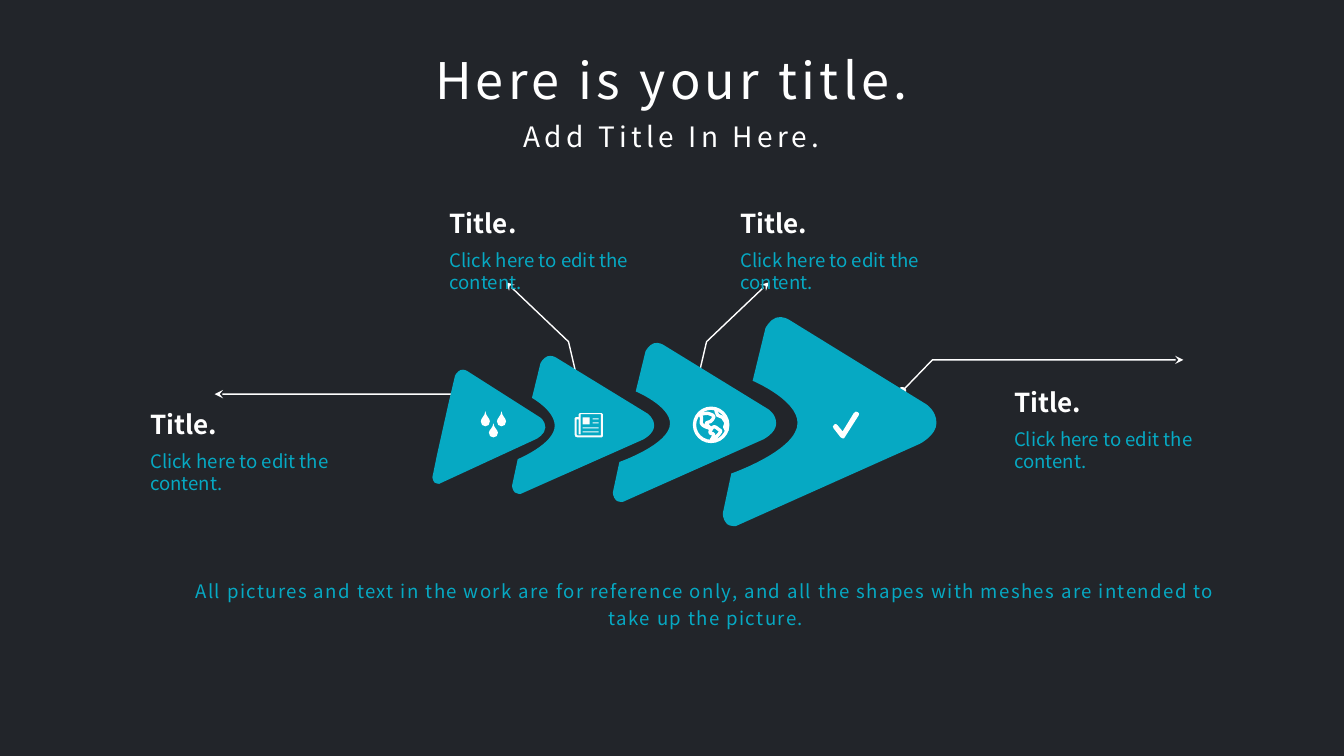
from lxml import etree
from pptx import Presentation
from pptx.dml.color import RGBColor
from pptx.enum.shapes import MSO_SHAPE
from pptx.enum.text import PP_ALIGN
from pptx.oxml.ns import qn
from pptx.util import Inches, Pt

CENTER, LEFT = PP_ALIGN.CENTER, PP_ALIGN.LEFT
RECT, OVAL = MSO_SHAPE.RECTANGLE, MSO_SHAPE.OVAL
DARK = RGBColor(0x22, 0x25, 0x2A)
TEAL = RGBColor(0x06, 0xA9, 0xC3)
WHITE = RGBColor(0xFF, 0xFF, 0xFF)
OFF_WHITE = RGBColor(0xFC, 0xFC, 0xFC)
FONT = "Noto Sans CJK SC"

# Grid of square cells: 133.33 columns by 75 rows
CELL = Inches(0.1)
COLS, ROWS = 133.33, 75

# Leader routes, as offsets from the start; x is mirrored for the left side
SIDE = [(0, 0), (3, -3.1), (27.9, -3.1)]
UPWARD = [(0, 0), (1.2, -5.1), (7.4, -11)]
# text left, text top, leader start, route, direction
CALLOUTS = [
    (44.6, 20.6, (57.6, 39), UPWARD, -1),
    (73.45, 20.6, (68.9, 39), UPWARD, 1),
    (100.6, 38.3, (89.5, 38.8), SIDE, 1),
    (14.9, 40.5, (49.2, 42.2), SIDE, -1),
]

# left, top, width, height, notch depth as a share of the width
ARROWS = [
    (42.9, 36.6, 11.2, 11.4, None),
    (50.8, 35.2, 14.1, 13.8, 0.3),
    (60.8, 33.9, 16.2, 15.9, 0.35),
    (71.7, 31.3, 21.2, 20.9, 0.35),
]

# Outlines: one point is a straight step, three points are a curve
ARROW_BODY = [
    [(.14, .31)], [(.2, .06)],
    [(.2, .06), (.22, .02), (.25, .01)], [(.28, 0), (.31, .02), (.31, .02)],
    [(.95, .42)], [(.95, .42), (1, .45), (1, .51)],
    [(1, .57), (.92, .61), (.92, .61)], [(.06, 1)],
    [(.06, 1), (.03, 1), (.02, .99)], [(0, .97), (0, .94), (0, .94)],
    [(.04, .75)],
]
DROP = [
    [(.5, 0)], [(.45, .33), (0, .47), (0, .67)], [(0, .87), (.2, 1), (.5, 1)],
    [(.8, 1), (1, .87), (1, .67)], [(1, .47), (.55, .33), (.5, 0)],
]
DROP_BOXES = [(47.7, 40.8, .9, 1.5), (49.3, 40.8, .9, 1.5), (48.5, 42, .9, 1.4)]
CHECK = [
    [(83.6, 43.5)], [(83.5, 43.5), (83.5, 43.5), (83.4, 43.4)], [(82.7, 42.5)],
    [(82.6, 42.4), (82.6, 42.2), (82.8, 42.1)],
    [(82.9, 42), (83, 42.1), (83.1, 42.2)], [(83.6, 42.8)], [(84.7, 41)],
    [(84.8, 40.8), (85, 40.8), (85.1, 40.9)],
    [(85.2, 40.9), (85.3, 41.1), (85.2, 41.2)], [(83.8, 43.4)],
    [(83.8, 43.5), (83.7, 43.5), (83.6, 43.5)],
]
PAPER_EDGE = [
    [(59.7, 41)], [(57.5, 41)], [(57.4, 41.1)], [(57.4, 41.4)], [(57.1, 41.4)],
    [(57, 41.5)], [(57, 43.1)], [(57, 43.3), (57.1, 43.4), (57.3, 43.4)],
    [(59.7, 43.4)], [(59.8, 43.3)], [(59.8, 41.1)],
]
PAPER_HOLE = [
    [(59.6, 43.2)], [(57.3, 43.2)], [(57.2, 43.1)], [(57.2, 41.6)],
    [(57.4, 41.6)], [(57.4, 43.1)], [(57.6, 43.1)], [(57.6, 41.1)], [(59.6, 41.1)],
]
PAPER_BLOCKS = [
    (57.8, 41.4, .7, .7, OFF_WHITE), (58.8, 41.5, .6, .1, WHITE),
    (58.8, 41.9, .6, .1, OFF_WHITE), (57.8, 42.4, 1.6, .1, WHITE),
    (57.8, 42.8, 1.6, .1, OFF_WHITE),
]
LAND_WEST = [
    [(69.6, 41.6)], [(69.5, 41.8), (69.5, 42.1), (69.9, 42.3)],
    [(70.3, 42.5), (70.4, 42.4), (70.4, 42.5)],
    [(70.5, 42.5), (70.4, 42.5), (70.4, 42.4)],
    [(70.4, 42.3), (70.3, 42.3), (70.3, 42.3)],
    [(70.2, 42.3), (70.2, 42.2), (70.2, 42.2)],
    [(70.2, 42.1), (70.1, 42.2), (70.1, 42.1)],
    [(70, 42), (70.1, 41.9), (70.2, 41.9)],
    [(70.5, 42), (70.5, 41.7), (70.7, 41.6)],
    [(71.1, 41.2), (70.5, 41.1), (70.2, 41)],
    [(69.9, 41), (69.4, 41.1), (69.5, 41.2)],
    [(69.6, 41.3), (69.6, 41.5), (69.6, 41.6)],
]
LAND_SOUTH = [
    [(70.5, 42.7)], [(70.5, 42.9), (70.3, 42.8), (70.5, 43)],
    [(70.7, 43.2), (70.8, 42.8), (70.8, 43.2)],
    [(70.7, 43.6), (70.4, 43.7), (70.7, 43.6)],
    [(71, 43.5), (70.9, 43.6), (71.1, 43.3)],
    [(71.3, 43.1), (71.4, 43), (71.5, 42.8)],
    [(71.6, 42.7), (71.4, 42.7), (71.3, 42.6)],
    [(71.2, 42.5), (70.9, 42.2), (70.7, 42.4)],
    [(70.6, 42.5), (70.5, 42.7), (70.5, 42.7)],
]
LAND_EAST = [
    [(71, 40.6)], [(71, 40.7), (71.1, 41), (71.2, 41.2)],
    [(71.4, 41.3), (71.8, 41.4), (71.8, 41.6)],
    [(71.9, 41.8), (72.1, 41.9), (72, 42.1)],
    [(71.9, 42.2), (71.8, 42.5), (72, 42.6)],
    [(72.1, 42.7), (72.2, 42.6), (72.2, 42.6)],
]


def cells(*values):
    return [int(v * CELL) for v in values]


def paint(sp, fill=None, line=None, width=1):
    sp.shadow.inherit = False
    for part, color in ((sp.fill, fill), (sp.line.fill, line)):
        if color is None:
            part.background()
        else:
            part.solid()
            part.fore_color.rgb = color
    if line is not None:
        sp.line.width = Pt(width)
    return sp


def place(outline, left, top, width, height):
    """Fit an outline given in shares of a box into that box."""
    return [[(left + x * width, top + y * height) for x, y in step] for step in outline]


def add_outline(s, contours, closed=True, **style):
    builder = None
    for contour in contours:
        start, *rest = [cells(*point) for step in contour for point in step]
        if builder is None:
            builder = s.shapes.build_freeform(*start)
        else:
            builder.move_to(*start)
        builder.add_line_segments(rest, close=closed)
    sp = builder.convert_to_shape()
    # Join the three segments of each curved step into one Bezier curve
    segments = iter(list(sp._element.iter(qn("a:lnTo"))))
    for step in (step for contour in contours for step in contour[1:]):
        first, *others = [next(segments) for _ in step]
        if others:
            curve = etree.Element(qn("a:cubicBezTo"))
            first.addprevious(curve)
            for segment in (first, *others):
                curve.append(segment[0])
                segment.getparent().remove(segment)
    return paint(sp, **style)


def add_preset(s, kind, box, **style):
    return paint(s.shapes.add_shape(kind, *cells(*box)), **style)


def add_text(s, text, box, size, color, bold=False, align=LEFT, spacing=0,
             margin=0, before=0, leading=None):
    tf = s.shapes.add_textbox(*cells(*box)).text_frame
    tf.word_wrap = True
    for side in ("left", "top", "right", "bottom"):
        setattr(tf, "margin_" + side, cells(margin)[0])
    p = tf.paragraphs[0]
    p.alignment = align
    if leading:
        p.line_spacing = leading
    if before:
        space = etree.SubElement(p._p.get_or_add_pPr(), qn("a:spcBef"))
        etree.SubElement(space, qn("a:spcPct")).set("val", str(before * 1000))
    r = p.add_run()
    r.text = text
    for name, value in {"size": Pt(size), "bold": bold, "name": FONT}.items():
        setattr(r.font, name, value)
    r.font.color.rgb = color
    if spacing:
        r._r.get_or_add_rPr().set("spc", str(spacing * 100))


def add_leader(s, start, route, direction):
    outline = [[(start[0] + direction * dx, start[1] + dy)] for dx, dy in route]
    sp = add_outline(s, [outline], closed=False, line=WHITE)
    for end, kind in (("a:headEnd", "oval"), ("a:tailEnd", "stealth")):
        etree.SubElement(sp.line._get_or_add_ln(), qn(end)).set("type", kind)


def add_arrow(s, *box, notch):
    outline = list(ARROW_BODY)
    if notch:
        outline += [[(.04, .75), (notch, .64), (notch, .51)],
                    [(notch, .4), (.14, .31), (.14, .31)]]
    add_outline(s, [place(outline, *box)], fill=TEAL)


def add_icons(s):
    add_outline(s, [place(DROP, *box) for box in DROP_BOXES], fill=WHITE)
    # Newspaper
    add_outline(s, [PAPER_EDGE, PAPER_HOLE], fill=OFF_WHITE)
    for *box, color in PAPER_BLOCKS:
        add_preset(s, RECT, box, fill=color)
    # Globe
    add_preset(s, OVAL, (68.9, 40.5, 3.3, 3.3), line=WHITE, width=2.38)
    for land in (LAND_WEST, LAND_SOUTH, LAND_EAST):
        add_outline(s, [land], closed=land is not LAND_EAST, line=WHITE, width=2.38)
    add_outline(s, [CHECK], fill=WHITE)


def main():
    prs = Presentation()
    prs.slide_width, prs.slide_height = cells(COLS, ROWS)
    s = prs.slides.add_slide(prs.slide_layouts[6])
    s.background.fill.solid()
    s.background.fill.fore_color.rgb = DARK

    # Heading
    heading = {"color": WHITE, "align": CENTER, "spacing": 3, "margin": 0.5}
    add_text(s, "Here is your title.", (37.6, 4.35, 58.1, 7.1), 36, **heading)
    add_text(s, "Add Title In Here.", (48.15, 11.35, 37, 4.4), 20, **heading)

    # Leaders lie behind the arrows
    for _, _, start, route, direction in CALLOUTS:
        add_leader(s, start, route, direction)
    for *box, notch in ARROWS:
        add_arrow(s, *box, notch=notch)
    add_icons(s)

    # Callout texts and closing note
    for left, top, *_ in CALLOUTS:
        add_text(s, "Title.", (left, top, 23.8, 3.1), 18.6, WHITE, bold=True, before=20)
        add_text(s, "Click here to edit the content.", (left, top + 4.1, 22.6, 2.2),
                 13.3, TEAL, before=20)
    add_text(s, "All pictures and text in the work are for reference only, and all the "
             "shapes with meshes are intended to take up the picture.",
             (17.95, 57.1, 104.2, 2.5), 13.3, TEAL, align=CENTER, spacing=1, leading=1.2)
    prs.save("out.pptx")


if __name__ == "__main__":
    main()
